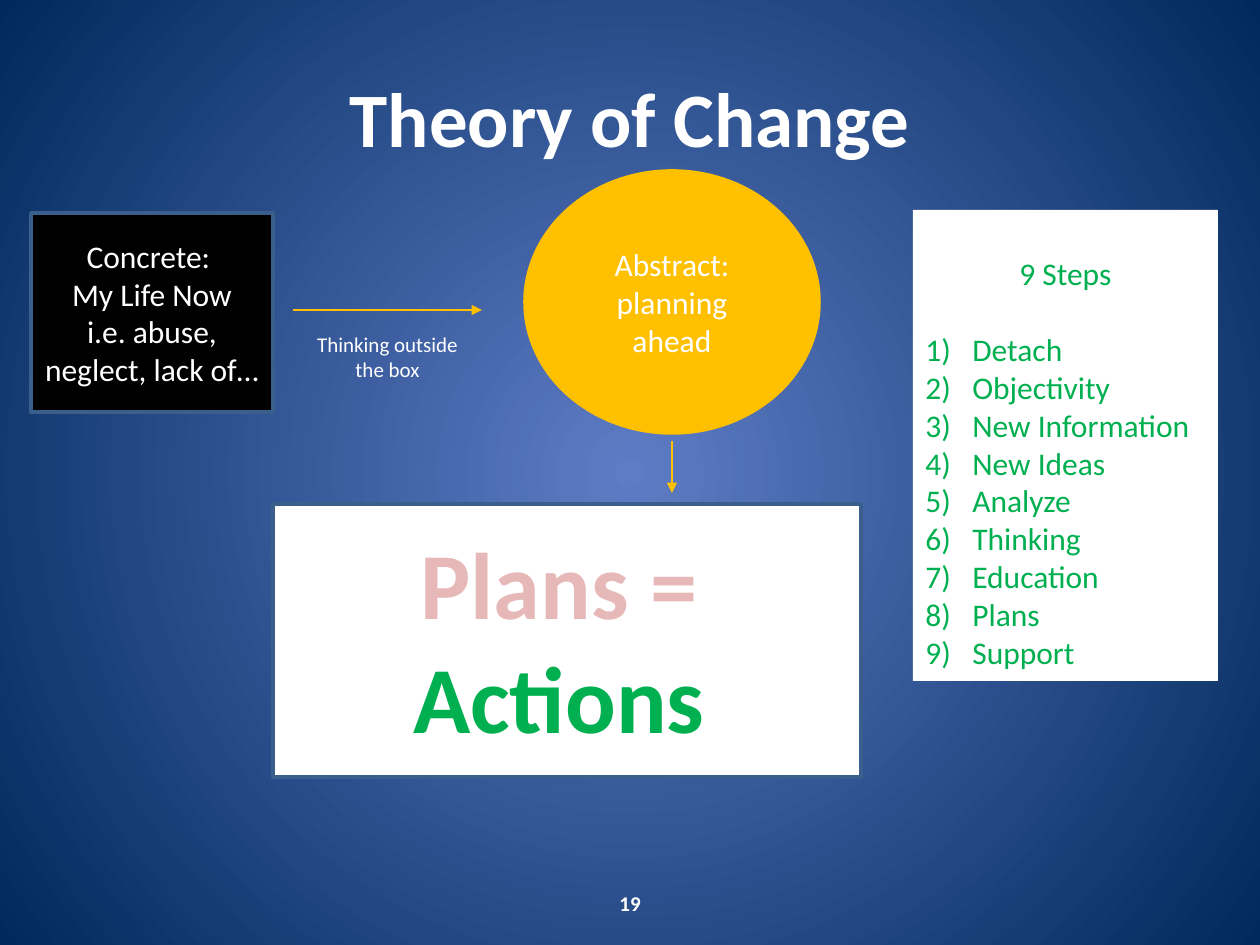
from dataclasses import dataclass

from pptx import Presentation
from pptx.dml.color import RGBColor
from pptx.enum.shapes import MSO_CONNECTOR as Conn, MSO_SHAPE as Kind
from pptx.enum.text import MSO_ANCHOR as Anchor, PP_ALIGN as Align
from pptx.oxml import parse_xml
from pptx.oxml.ns import nsdecls, qn
from pptx.util import Pt

SCALE = 914400 / 126


@dataclass(frozen=True)
class Theme:
    font: str = "Calibri"
    glow: str = "5E7CC5"
    navy: str = "00295C"
    edge: str = "3A5F8C"
    white: str = "FFFFFF"
    black: str = "000000"
    gold: str = "FFC000"
    pink: str = "E6B9B8"
    green: str = "00B050"
    title: int = 44
    huge: int = 54
    body: int = 18
    small: int = 12


T = Theme()


def px(*vals):
    return [round(v * SCALE) for v in vals]


def rgb(code):
    return RGBColor.from_string(code)


def style(runs, size, color, bold=False):
    for run in runs:
        font = run.font
        font.name, font.size, font.bold = T.font, Pt(size), bold
        font.color.rgb = rgb(color)


def write(shape, text, size, color, bold=False, anchor=Anchor.MIDDLE):
    frame = shape.text_frame
    frame.word_wrap = True
    frame.vertical_anchor = anchor
    frame.text = text
    for para in frame.paragraphs:
        para.alignment = Align.CENTER
        style(para.runs, size, color, bold)
    return frame


def label(slide, box, text, size, color=T.white, bold=False, anchor=Anchor.MIDDLE):
    return write(slide.shapes.add_textbox(*px(*box)), text, size, color, bold, anchor)


def block(slide, kind, box, fill, edge=None):
    shape = slide.shapes.add_shape(kind, *px(*box))
    shape.shadow.inherit = False
    shape.fill.solid()
    shape.fill.fore_color.rgb = rgb(fill)
    if edge:
        shape.line.color.rgb = rgb(edge)
        shape.line.width = Pt(2)
    else:
        shape.line.fill.background()
    return shape


def arrow(slide, x, y, dx, dy):
    line = slide.shapes.add_connector(Conn.STRAIGHT, *px(x, y, x + dx, y + dy))
    line.line.color.rgb = rgb(T.gold)
    line.line.width = Pt(0.75)
    line.line._get_or_add_ln().append(
        parse_xml(f'<a:tailEnd {nsdecls("a")} type="triangle"/>'))
    line._element.spPr.append(parse_xml(f'<a:effectLst {nsdecls("a")}/>'))


def backdrop(slide):
    """Radial glow from the centre of the slide."""
    fill = slide.background.fill
    fill.gradient()
    for stop, code, pos in zip(fill.gradient_stops, (T.glow, T.navy), (0, 1)):
        stop.color.rgb = rgb(code)
        stop.position = pos
    lin = slide.element.find(".//" + qn("a:lin"))
    lin.getparent().replace(lin, parse_xml(
        f'<a:path {nsdecls("a")} path="circle">'
        '<a:fillToRect l="50000" t="50000" r="50000" b="50000"/></a:path>'))


def flow(slide, x, y, w, h):
    """Concrete box, arrow with its caption, then the abstract circle."""
    now = block(slide, Kind.RECTANGLE, (x, y + 42, 242, 199), T.black, T.edge)
    write(now, "Concrete: \nMy Life Now\ni.e. abuse, neglect, lack of…",
          T.body, T.white)
    goal = block(slide, Kind.OVAL, (x + w - 294, y, 294, h), T.gold, T.gold)
    write(goal, "Abstract: planning ahead", T.body, T.white)
    arrow(slide, x + 262, y + 139, 189, 0)
    label(slide, (x + 262, y + 154, 189, 63), "Thinking outside the box",
          T.small, anchor=Anchor.TOP)
    arrow(slide, x + w - 147, y + h + 8, 0, 52)


def result(slide, x, y, w, h):
    block(slide, Kind.RECTANGLE, (x, y, w, h), T.white, T.edge)
    frame = label(slide, (x + 5, y + 15, w - 26, h - 31), "Plans = ",
                  T.huge, T.pink, True, Anchor.TOP)
    run = frame.paragraphs[0].add_run()
    run.text = "Actions"
    style([run], T.huge, T.green, True)


def steps(slide, x, y, w, h):
    names = ("Detach", "Objectivity", "New Information", "New Ideas", "Analyze",
             "Thinking", "Education", "Plans", "Support")
    panel = block(slide, Kind.RECTANGLE, (x, y, w, h), T.white)
    frame = write(panel, "\n".join(("9 Steps", *names)), T.body, T.green,
                  anchor=Anchor.TOP)
    frame.margin_top, = px(44)
    head, *items = frame.paragraphs
    head.space_after = Pt(22)
    indent, = px(47)
    for para in items:
        para.alignment = Align.LEFT
        props = para._p.get_or_add_pPr()
        props.set("marL", str(indent))
        props.set("indent", str(-indent))
        props.append(parse_xml(
            f'<a:buAutoNum {nsdecls("a")} type="arabicParenR"/>'))


def main():
    deck = Presentation()
    deck.slide_width, deck.slide_height = px(1260, 945)
    slide = deck.slides.add_slide(deck.slide_layouts[6])
    backdrop(slide)
    label(slide, (63, 38, 1134, 158), "Theory of Change", T.title, bold=True)
    flow(slide, 31, 171, 788, 262)
    result(slide, 273, 504, 588, 273)
    steps(slide, 913, 210, 305, 471)
    label(slide, (483, 878, 294, 50), "19", T.small, bold=True)
    deck.save("out.pptx")


if __name__ == "__main__":
    main()
